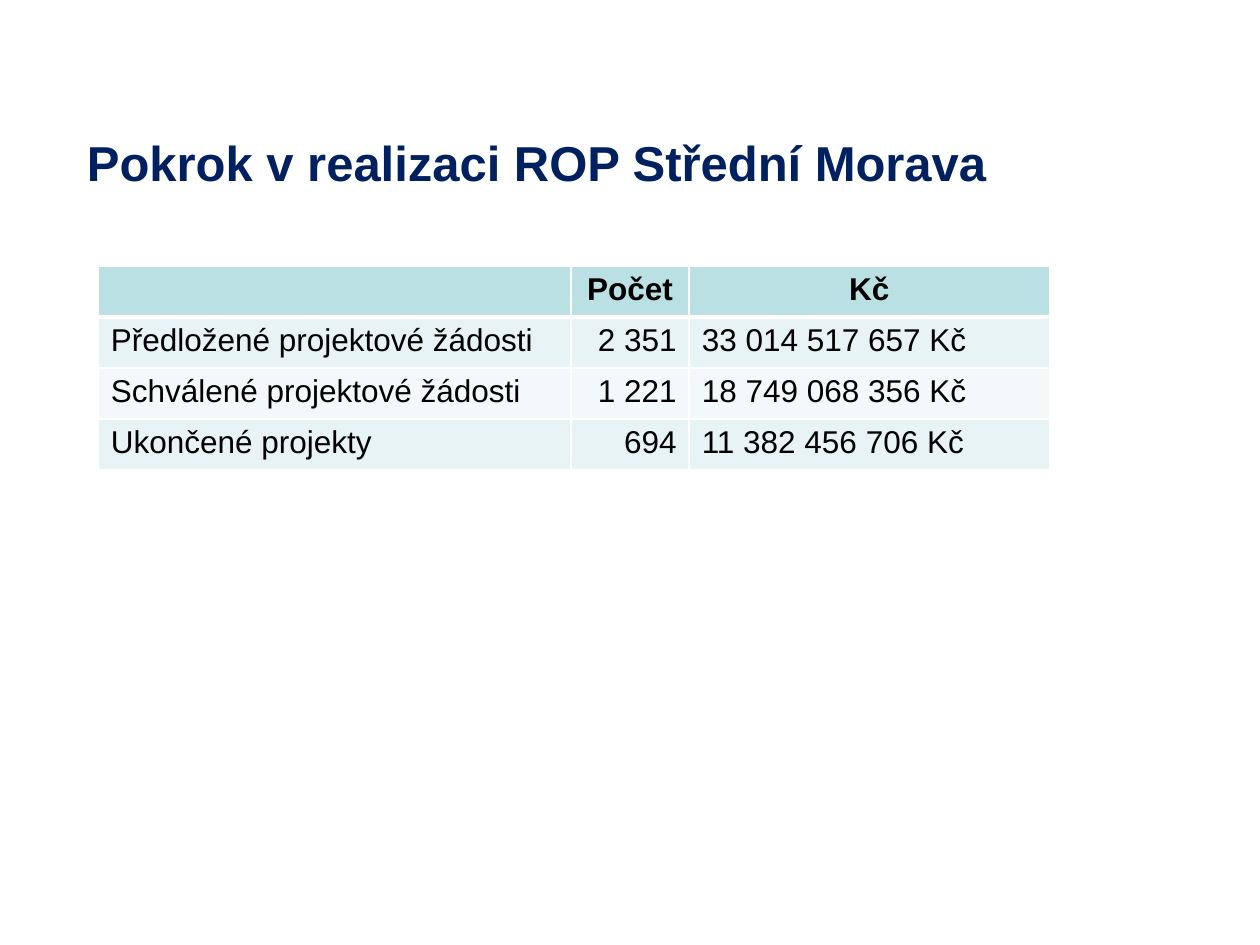
"""Build the slide on progress in carrying out the ROP Střední Morava programme."""
from dataclasses import dataclass

from lxml import etree
from pptx import Presentation
from pptx.dml.color import RGBColor
from pptx.enum.text import MSO_ANCHOR, PP_ALIGN
from pptx.oxml.ns import qn
from pptx.util import Inches, Pt

LEFT, CENTER, RIGHT = PP_ALIGN.LEFT, PP_ALIGN.CENTER, PP_ALIGN.RIGHT
TOP = MSO_ANCHOR.TOP
NAVY = RGBColor(0x00, 0x20, 0x60)
BLACK = RGBColor(0x00, 0x00, 0x00)
WHITE = RGBColor(0xFF, 0xFF, 0xFF)
HEADER_FILL = RGBColor(0xBB, 0xE0, 0xE3)
BAND_FILLS = (RGBColor(0xE7, 0xF3, 0xF4), RGBColor(0xF3, 0xF9, 0xFA))
FONT = "Arial"
TITLE_ONLY = 5
ROW_HEIGHT = 0.405
THIN, THICK = 1, 3


@dataclass(frozen=True)
class Column:
    """Heading, width in inches and body alignment of a table column."""
    heading: str
    width: float
    align: PP_ALIGN


COLUMNS = (
    Column("", 3.75, LEFT),
    Column("Počet", 0.94, RIGHT),
    Column("Kč", 2.86, LEFT),
)
ROWS = (
    ("Předložené projektové žádosti", "2 351", "33 014 517 657 Kč"),
    ("Schválené projektové žádosti", "1 221", "18 749 068 356 Kč"),
    ("Ukončené projekty", "694", "11 382 456 706 Kč"),
)


def format_text(tf, size: int, color: RGBColor, bold: bool, align: PP_ALIGN) -> None:
    """Format the only paragraph of a text frame."""
    p = tf.paragraphs[0]
    p.alignment = align
    for r in p.runs:
        r.font.name = FONT
        r.font.size = Pt(size)
        r.font.bold = bold
        r.font.color.rgb = color


def add_title(s, text: str) -> None:
    """Fill and place the title placeholder."""
    title = s.shapes.title
    title.left, title.top = Inches(0.59), Inches(0.48)
    title.width, title.height = Inches(8.75), Inches(2.93)
    tf = title.text_frame
    tf.text = text
    tf.word_wrap = True
    tf.vertical_anchor = TOP
    tf.margin_top = Inches(0.57)
    format_text(tf, 28, NAVY, True, LEFT)


def set_borders(cell, top: int, bottom: int) -> None:
    """Draw white borders of the given point widths round a cell."""
    properties = cell._tc.get_or_add_tcPr()
    for side, width in (("L", THIN), ("R", THIN), ("T", top), ("B", bottom)):
        line = etree.SubElement(properties, qn(f"a:ln{side}"), w=str(Pt(width)))
        fill = etree.SubElement(line, qn("a:solidFill"))
        etree.SubElement(fill, qn("a:srgbClr"), val=str(WHITE))


def add_progress_table(s) -> None:
    """Add the table of counts and amounts."""
    records = (tuple(column.heading for column in COLUMNS), *ROWS)
    width = sum(column.width for column in COLUMNS)
    table = s.shapes.add_table(
        len(records), len(COLUMNS), Inches(0.78), Inches(2.11),
        Inches(width), Inches(ROW_HEIGHT * len(records)),
    ).table
    for i, column in enumerate(COLUMNS):
        table.columns[i].width = Inches(column.width)
    for i, record in enumerate(records):
        header = i == 0
        for j, (column, text) in enumerate(zip(COLUMNS, record)):
            cell = table.cell(i, j)
            cell.text_frame.text = text
            format_text(cell.text_frame, 18, BLACK, header, CENTER if header else column.align)
            set_borders(cell, THICK if i == 1 else THIN, THICK if header else THIN)
            cell.fill.solid()
            cell.fill.fore_color.rgb = HEADER_FILL if header else BAND_FILLS[(i - 1) % 2]


def main() -> None:
    """Build and save the presentation."""
    prs = Presentation()
    prs.slide_width, prs.slide_height = Inches(10), Inches(7.5)
    s = prs.slides.add_slide(prs.slide_layouts[TITLE_ONLY])
    add_title(s, "Pokrok v realizaci ROP Střední Morava")
    add_progress_table(s)
    prs.save("out.pptx")


if __name__ == "__main__":
    main()
